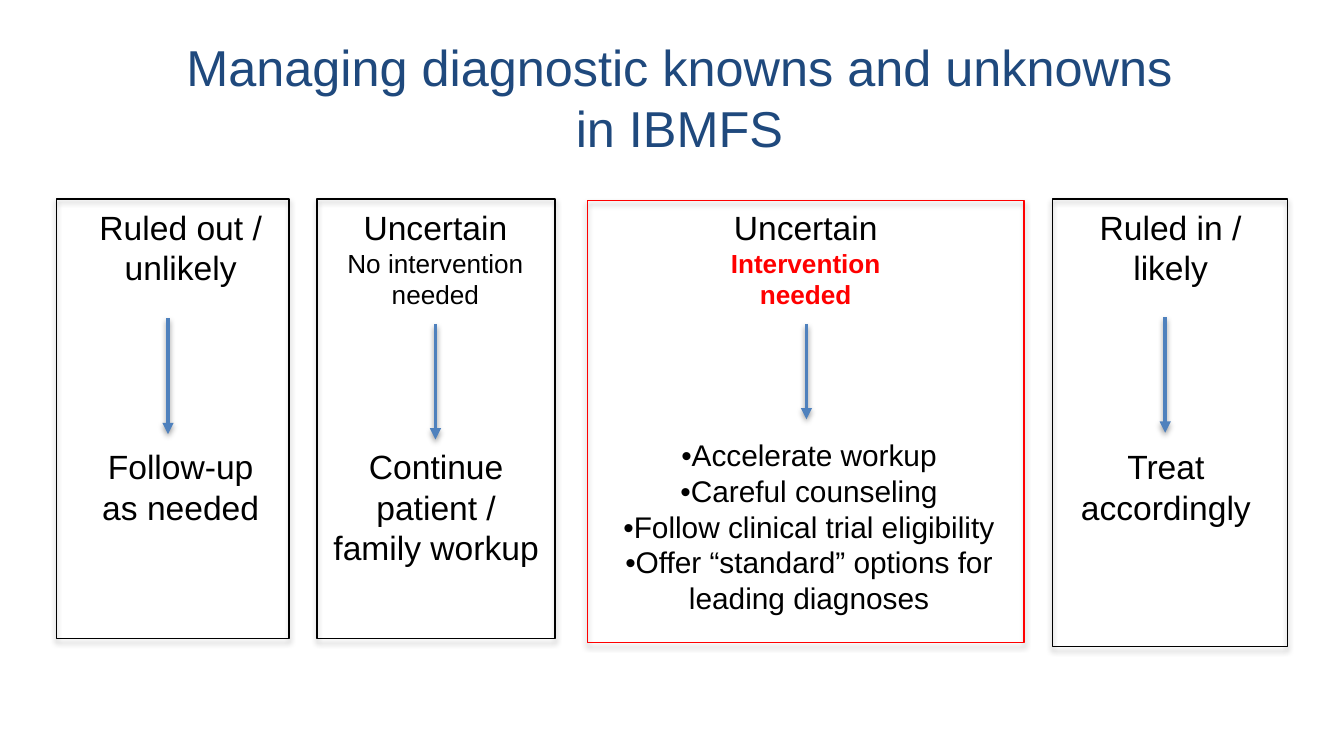
from dataclasses import dataclass

from lxml import etree
from pptx import Presentation
from pptx.dml.color import RGBColor
from pptx.enum.shapes import MSO_CONNECTOR, MSO_SHAPE
from pptx.enum.text import PP_ALIGN
from pptx.oxml.ns import qn
from pptx.util import Inches, Pt

RECT = MSO_SHAPE.RECTANGLE
LINE = MSO_CONNECTOR.STRAIGHT
CENTER = PP_ALIGN.CENTER

FONT = "Arial"
BLACK, RED, BLUE, NAVY = "000000", "FF0000", "4F81BD", "1F497D"
HEAD_TOP = 1.49


@dataclass
class Row:
    text: str
    size: int = 18
    color: str = BLACK
    bold: bool = False


@dataclass
class Area:
    left: float
    top: float
    width: float
    height: float


@dataclass
class Column:
    frame: Area
    edge: str
    head: Area
    title: list[Row]
    arrow: tuple[float, float, float]  # x, start y, end y
    foot: Area
    action: list[Row]


COLUMNS = [
    Column(Area(0.42, 1.48, 1.73, 3.27), BLACK,
           Area(0.61, HEAD_TOP, 1.47, 0.71), [Row("Ruled out / unlikely")],
           (1.25, 2.37, 3.23),
           Area(0.61, 3.27, 1.47, 0.71), [Row("Follow-up as needed")]),
    Column(Area(2.36, 1.48, 1.77, 3.27), BLACK,
           Area(2.48, HEAD_TOP, 1.52, 0.88),
           [Row("Uncertain"), Row("No intervention needed", 14)],
           (3.24, 2.41, 3.27),
           Area(2.37, 3.27, 1.75, 1.01),
           [Row("Continue patient / family workup")]),
    Column(Area(4.37, 1.49, 3.25, 3.29), RED,
           Area(5.32, HEAD_TOP, 1.35, 0.88),
           [Row("Uncertain"), Row("Intervention needed", 14, RED, True)],
           (6, 2.41, 3.12),
           Area(4.52, 3.2, 3, 1.45),
           [Row(text, 16) for text in (
               "•Accelerate workup",
               "•Careful counseling",
               "•Follow clinical trial eligibility",
               "•Offer “standard” options for leading diagnoses")]),
    Column(Area(7.83, 1.48, 1.75, 3.33), BLACK,
           Area(8, HEAD_TOP, 1.42, 0.71), [Row("Ruled in / likely")],
           (8.67, 2.36, 3.22),
           Area(7.94, 3.27, 1.47, 0.71), [Row("Treat accordingly")]),
]


def paint(color: str) -> RGBColor:
    return RGBColor.from_string(color)


def inches(area: Area) -> list[Inches]:
    return [Inches(n) for n in (area.left, area.top, area.width, area.height)]


def add_shadow(shape, dist: float, alpha: int) -> None:
    """Cast a soft black shadow straight down."""
    effects = etree.SubElement(shape._element.spPr, qn("a:effectLst"))
    outer = etree.SubElement(
        effects, qn("a:outerShdw"), blurRad=str(Pt(3.1)), dist=str(Pt(dist)),
        dir="5400000", rotWithShape="0")
    color = etree.SubElement(outer, qn("a:srgbClr"), val=BLACK)
    etree.SubElement(color, qn("a:alpha"), val=str(alpha * 1000))


def add_text(slide, area: Area, rows: list[Row], wrap: bool = True) -> None:
    frame = slide.shapes.add_textbox(*inches(area)).text_frame
    frame.word_wrap = wrap
    frame.text = "\n".join(row.text for row in rows)
    for par, row in zip(frame.paragraphs, rows):
        par.alignment = CENTER
        font = par.runs[0].font
        font.name = FONT
        font.size = Pt(row.size)
        font.bold = row.bold
        font.color.rgb = paint(row.color)


def add_frame(slide, area: Area, edge: str) -> None:
    box = slide.shapes.add_shape(RECT, *inches(area))
    box.fill.background()
    box.line.color.rgb = paint(edge)
    box.line.width = Pt(0.75)
    add_shadow(box, 1.8, 35)


def add_arrow(slide, x: float, start: float, end: float) -> None:
    arrow = slide.shapes.add_connector(
        LINE, Inches(x), Inches(start), Inches(x), Inches(end))
    arrow.line.color.rgb = paint(BLUE)
    arrow.line.width = Pt(2)
    etree.SubElement(arrow.line._get_or_add_ln(), qn("a:tailEnd"),
                     type="triangle")
    add_shadow(arrow, 1.6, 38)


def main() -> None:
    deck = Presentation()
    deck.slide_width = Inches(10)
    deck.slide_height = Inches(10 * 9 / 16)
    slide = deck.slides.add_slide(deck.slide_layouts[6])
    title = [Row("Managing diagnostic knowns and unknowns", 27, NAVY),
             Row("in IBMFS", 27, NAVY)]
    add_text(slide, Area(1.25, 0.22, 7.61, 1.01), title, wrap=False)
    for col in COLUMNS:
        add_frame(slide, col.frame, col.edge)
        add_text(slide, col.head, col.title)
        add_arrow(slide, *col.arrow)
        add_text(slide, col.foot, col.action)
    deck.save("out.pptx")


if __name__ == "__main__":
    main()
